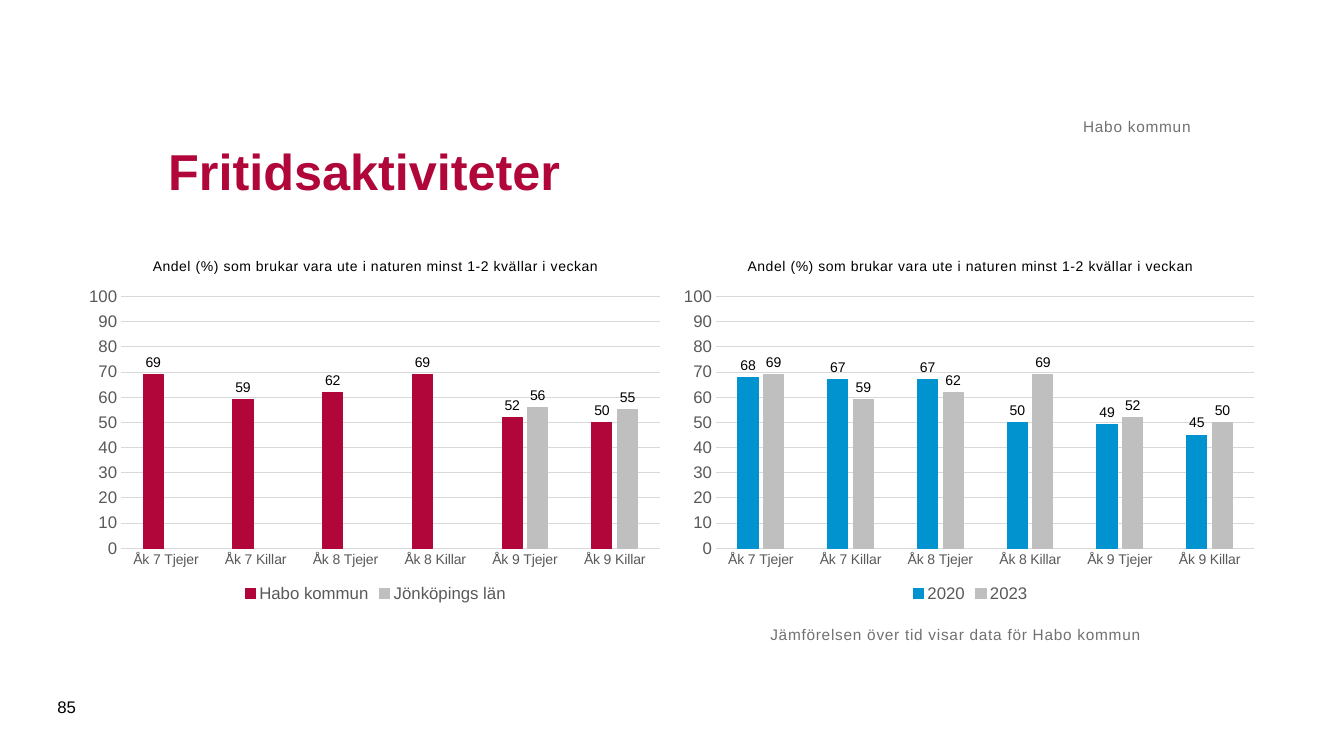
from dataclasses import dataclass

from pptx import Presentation
from pptx.chart.data import CategoryChartData
from pptx.dml.color import RGBColor
from pptx.enum.chart import XL_CHART_TYPE, XL_LABEL_POSITION, XL_LEGEND_POSITION, XL_TICK_MARK
from pptx.enum.text import MSO_ANCHOR, PP_ALIGN
from pptx.oxml import parse_xml
from pptx.oxml.ns import nsdecls, qn
from pptx.util import Inches, Pt


@dataclass(frozen=True)
class Theme:
    """Colours, type sizes and font of the slide."""
    face: str = "Arial"
    red: str = "B1063A"
    blue: str = "0093D0"
    gray: str = "BFBFBF"
    grid: str = "D9D9D9"
    axis: str = "595959"
    note: str = "717171"
    ink: str = "000000"
    title: int = 36
    large: int = 12
    body: int = 11
    small: int = 10
    track: int = 50


def apply(item, **values):
    """Set each given value on the item."""
    for name, value in values.items():
        setattr(item, name, value)


class Page:
    """Hold the theme and slide, and draw its elements."""

    def __init__(self, slide, theme):
        """Keep the slide and theme."""
        self.slide = slide
        self.theme = theme

    def font(self, font, size, color, bold=False):
        """Style a font."""
        apply(font, name=self.theme.face, size=Pt(size), bold=bold)
        font.color.rgb = RGBColor.from_string(color)

    def line(self, line, color):
        """Style a thin line."""
        line.width = Pt(0.75)
        line.color.rgb = RGBColor.from_string(color)

    def label(self, frame, text, size, color, bold=False, track=0):
        """Add one styled run and return its paragraph."""
        para = frame.paragraphs[0]
        run = para.add_run()
        run.text = text
        self.font(run.font, size, color, bold)
        if track:
            run.font._element.set("spc", str(track))
        return para

    def text(self, box, text, size, color, anchor=MSO_ANCHOR.MIDDLE,
             align=PP_ALIGN.LEFT, flush=False, **style):
        """Add a text box."""
        frame = self.slide.shapes.add_textbox(*map(Inches, box)).text_frame
        apply(frame, word_wrap=True, vertical_anchor=anchor)
        if flush:
            apply(frame, margin_left=0, margin_right=0, margin_top=0, margin_bottom=0)
        self.label(frame, text, size, color, **style).alignment = align

    def chart(self, left, title, cats, series, form):
        """Add a clustered column chart."""
        theme = self.theme
        data = CategoryChartData()
        data.categories = cats
        for name, values, _ in series:
            data.add_series(name, values)
        box = map(Inches, (left, 2.4, 5.87, 3.62))
        chart = self.slide.shapes.add_chart(XL_CHART_TYPE.COLUMN_CLUSTERED, *box, data).chart
        self.font(chart.font, theme.small, theme.ink)
        apply(chart, has_title=True, has_legend=True)
        self.label(chart.chart_title.text_frame, title, theme.small, theme.ink, track=theme.track)
        apply(chart.legend, position=XL_LEGEND_POSITION.BOTTOM, include_in_layout=False)
        self.font(chart.legend.font, theme.large, theme.axis)
        self.axes(chart)
        self.frame(chart)
        plot = chart.plots[0]
        apply(plot, gap_width=219, overlap=-27, vary_by_categories=False)
        for bars, (_, _, color) in zip(plot.series, series):
            bars.format.fill.solid()
            bars.format.fill.fore_color.rgb = RGBColor.from_string(color)
            self.line(bars.format.line, color)
            apply(bars.data_labels, show_value=True, position=XL_LABEL_POSITION.OUTSIDE_END,
                  number_format=form, number_format_is_linked=False)
            self.font(bars.data_labels.font, theme.small, theme.ink)

    def axes(self, chart):
        """Style both axes and the grid."""
        theme = self.theme
        cat, val = chart.category_axis, chart.value_axis
        for axis, size in ((cat, theme.small), (val, theme.large)):
            apply(axis, major_tick_mark=XL_TICK_MARK.NONE, minor_tick_mark=XL_TICK_MARK.NONE)
            self.font(axis.tick_labels.font, size, theme.axis)
        self.line(cat.format.line, theme.grid)
        apply(val, minimum_scale=0, maximum_scale=100, major_unit=10, has_major_gridlines=True)
        apply(val.tick_labels, number_format="#,##0;#,##0", number_format_is_linked=False)
        val.format.line.fill.background()
        self.line(val.major_gridlines.format.line, theme.grid)

    def frame(self, chart):
        """Fix the inner plot area."""
        area = chart._chartSpace.chart.plotArea
        for old in area.findall(qn("c:layout")):
            area.remove(old)
        modes = "".join(f'<c:{side}Mode val="edge"/>' for side in "xy")
        sizes = "".join(f'<c:{side} val="{part}"/>' for side, part in
                        zip("xywh", (0.07, 0.15, 0.91, 0.69)))
        area.insert(0, parse_xml(
            f'<c:layout {nsdecls("c")}><c:manualLayout><c:layoutTarget val="inner"/>'
            f'{modes}{sizes}</c:manualLayout></c:layout>'))


def main():
    """Build and save the slide."""
    deck = Presentation()
    apply(deck, slide_width=Inches(13.33), slide_height=Inches(7.5))
    theme = Theme()
    page = Page(deck.slides.add_slide(deck.slide_layouts[6]), theme)
    cats = [f"Åk {year} {group}" for year in (7, 8, 9) for group in ("Tjejer", "Killar")]
    title = "Andel (%) som brukar vara ute i naturen minst 1-2 kvällar i veckan"
    habo = (69, 59, 62, 69, 52, 50)
    county = (None,) * 4 + (56, 55)
    past = (68, 67, 67, 50, 49, 45)
    page.chart(0.79, title, cats, [("Habo kommun", habo, theme.red),
                                   ("Jönköpings län", county, theme.gray)], "#,##0;#,##0")
    page.chart(6.69, title, cats, [("2020", past, theme.blue),
                                   ("2023", habo, theme.gray)], "#,##0")
    page.text((1.57, 0.98, 10.24, 1.42), "Fritidsaktiviteter", theme.title, theme.red, bold=True)
    page.text((1.57, 0.62, 10.24, 0.73), "Habo kommun", theme.body, theme.note,
              MSO_ANCHOR.BOTTOM, PP_ALIGN.RIGHT, True, track=theme.track)
    page.text((0.47, 6.81, 0.57, 0.4), "85", theme.large, theme.ink)
    page.text((7.64, 6.2, 5.31, 0.94), "Jämförelsen över tid visar data för Habo kommun",
              theme.body, theme.note, MSO_ANCHOR.TOP, flush=True, track=theme.track)
    deck.save("out.pptx")


if __name__ == "__main__":
    main()
